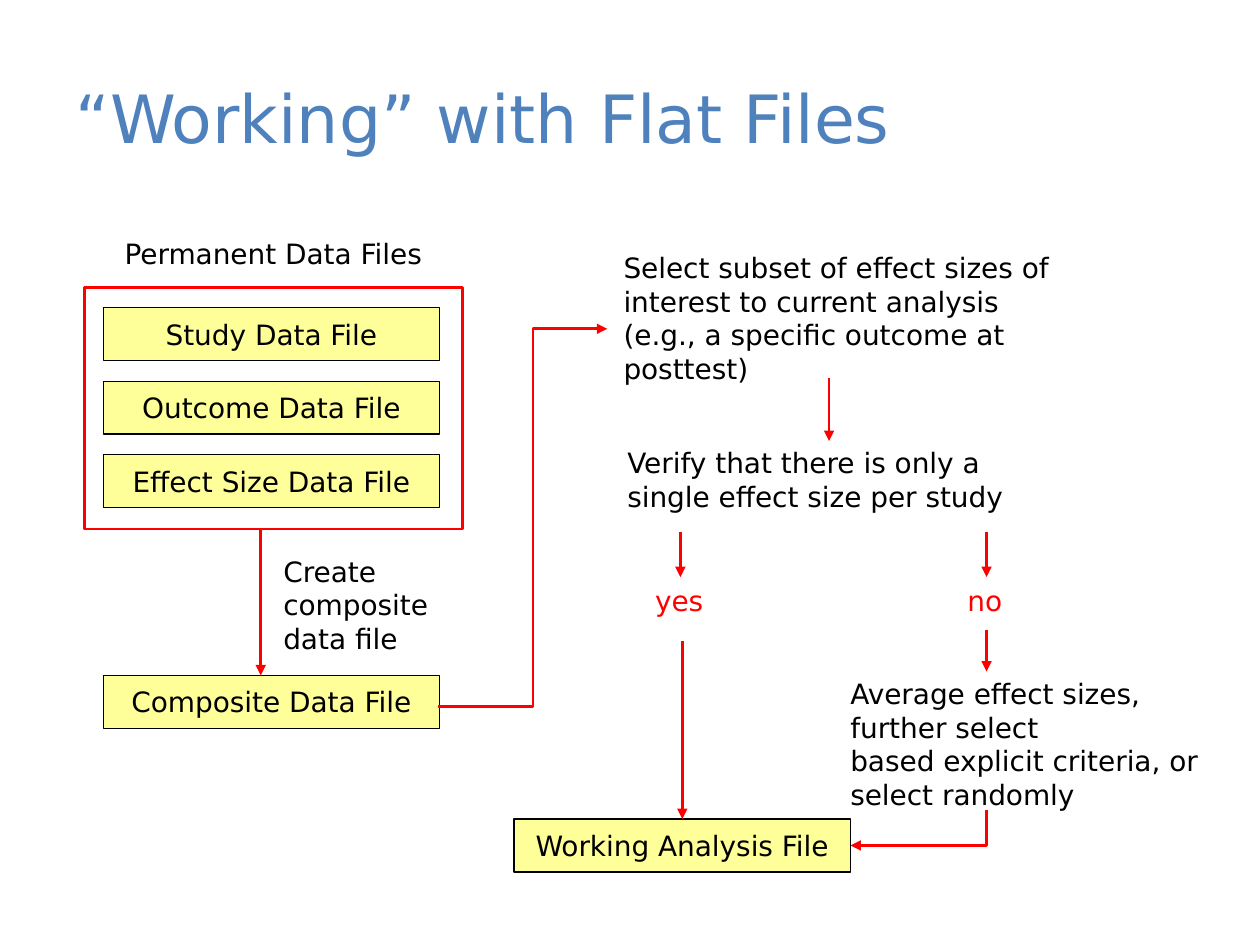
from lxml import etree
from pptx import Presentation
from pptx.dml.color import RGBColor
from pptx.enum.shapes import MSO_CONNECTOR, MSO_SHAPE
from pptx.enum.text import MSO_ANCHOR, MSO_AUTO_SIZE, PP_ALIGN
from pptx.oxml.ns import qn
from pptx.util import Inches, Pt

STRAIGHT = MSO_CONNECTOR.STRAIGHT
RECTANGLE = MSO_SHAPE.RECTANGLE
MIDDLE = MSO_ANCHOR.MIDDLE
FIT_SHAPE = MSO_AUTO_SIZE.SHAPE_TO_FIT_TEXT
NO_FIT = MSO_AUTO_SIZE.NONE
LEFT, CENTER = PP_ALIGN.LEFT, PP_ALIGN.CENTER

TITLE_ONLY = 5
TOP = 0
COLUMNS, ROWS = 100, 75
BOX_WIDTH, BOX_HEIGHT = 26.7, 4.2


def color(value):
    return RGBColor.from_string(value)


class FlowSlide:
    font = "DejaVu Sans"
    black, red, yellow, blue = "000000", "FF0000", "FFFF99", "4F81BD"

    def __init__(self, presentation):
        self.slide = presentation.slides.add_slide(presentation.slide_layouts[TITLE_ONLY])
        self.column = presentation.slide_width / COLUMNS
        self.row = presentation.slide_height / ROWS

    def point(self, column, row):
        return round(column * self.column), round(row * self.row)

    def area(self, left, top, width, height):
        return self.point(left, top) + self.point(width, height)

    def set_text(self, text_frame, text, size=16, text_color=black, alignment=LEFT):
        text_frame.text = text
        for paragraph in text_frame.paragraphs:
            paragraph.alignment = alignment
            for run in paragraph.runs:
                run.font.name = self.font
                run.font.size = Pt(size)
                run.font.color.rgb = color(text_color)

    def outline(self, shape, line_color=red, width=1.5):
        shape.line.color.rgb = color(line_color)
        shape.line.width = Pt(width)

    def add_arrowhead(self, shape):
        line = shape.element.spPr.find(qn("a:ln"))
        etree.SubElement(line, qn("a:tailEnd"), type="triangle")

    def title(self, text, *area):
        title = self.slide.shapes.title
        title.left, title.top, title.width, title.height = self.area(*area)
        self.set_text(title.text_frame, text, 38, self.blue)
        title.text_frame.vertical_anchor = MIDDLE
        title.text_frame.auto_size = NO_FIT

    def file_box(self, text, left, top):
        shape = self.slide.shapes.add_shape(
            RECTANGLE, *self.area(left, top, BOX_WIDTH, BOX_HEIGHT))
        shape.shadow.inherit = False
        shape.fill.solid()
        shape.fill.fore_color.rgb = color(self.yellow)
        self.outline(shape, self.black, 0.75)
        self.set_text(shape.text_frame, text, alignment=CENTER)
        shape.text_frame.vertical_anchor = MIDDLE
        shape.text_frame.word_wrap = False
        return shape

    def frame(self, *area):
        shape = self.slide.shapes.add_shape(RECTANGLE, *self.area(*area))
        shape.shadow.inherit = False
        shape.fill.background()
        self.outline(shape)

    def label(self, text, *area, text_color=black, wrap=False):
        shape = self.slide.shapes.add_textbox(*self.area(*area))
        self.set_text(shape.text_frame, text, text_color=text_color)
        shape.text_frame.word_wrap = wrap
        shape.text_frame.auto_size = FIT_SHAPE

    def down_arrow(self, column, top, bottom, target=None):
        connector = self.slide.shapes.add_connector(
            STRAIGHT, *self.point(column, top), *self.point(column, bottom))
        if target is not None:
            connector.end_connect(target, TOP)
        self.outline(connector)
        self.add_arrowhead(connector)
        etree.SubElement(connector.element.spPr, qn("a:effectLst"))

    def bent_arrow(self, start, *corners):
        builder = self.slide.shapes.build_freeform(*self.point(*start))
        builder.add_line_segments([self.point(*corner) for corner in corners], close=False)
        shape = builder.convert_to_shape()
        shape.shadow.inherit = False
        shape.fill.background()
        self.outline(shape)
        self.add_arrowhead(shape)


def main():
    presentation = Presentation()
    presentation.slide_width, presentation.slide_height = Inches(10), Inches(7.5)
    flow = FlowSlide(presentation)
    flow.title("“Working” with Flat Files", 5, 3, 90, 12.5)

    files_left, files_top, files_pitch = 8.2, 24.4, 5.85
    flow.label("Permanent Data Files", 8.9, 18.3, 26.1, 3.7)
    flow.frame(6.7, 22.8, 30, 19.2)
    for index, name in enumerate(("Study", "Outcome", "Effect Size")):
        flow.file_box(f"{name} Data File", files_left, files_top + index * files_pitch)

    flow.file_box("Composite Data File", files_left, 53.6)
    flow.down_arrow(20.7, 41.9, 53.6)
    flow.label("Create\ncomposite\ndata file", 21.5, 43.5, 13.5, 9.1)
    flow.bent_arrow((34.8, 56.1), (42.3, 56.1), (42.3, 26.1), (48.2, 26.1))

    flow.label("Select subset of effect sizes of\ninterest to current analysis\n"
               "(e.g., a specific outcome at\nposttest)", 48.5, 19.4, 37.1, 11.8)
    flow.down_arrow(65.8, 30, 35)
    flow.label("Verify that there is only a\nsingle effect size per study",
               48.8, 34.9, 32.2, 6.4)

    no_column = 78.3
    for answer, left, width, column in (("yes", 51, 6.5, 54), ("no", 75.8, 5.5, no_column)):
        flow.down_arrow(column, 42.2, 45.8)
        flow.label(answer, left, 45.8, width, 3.7, text_color=flow.red, wrap=True)

    working_left, working_top = 40.8, 65
    working_file = flow.file_box("Working Analysis File", working_left, working_top)
    flow.down_arrow(working_left + BOX_WIDTH / 2, 50.9, working_top, working_file)

    flow.down_arrow(no_column, 50, 53.3)
    flow.label("Average effect sizes,\nfurther select\nbased explicit criteria, or\n"
               "select randomly", 66.5, 53.2, 30.1, 11.8)
    working_middle = working_top + BOX_HEIGHT / 2
    flow.bent_arrow((no_column, 64.3), (no_column, working_middle),
                    (working_left + BOX_WIDTH, working_middle))

    presentation.save("out.pptx")


if __name__ == "__main__":
    main()
